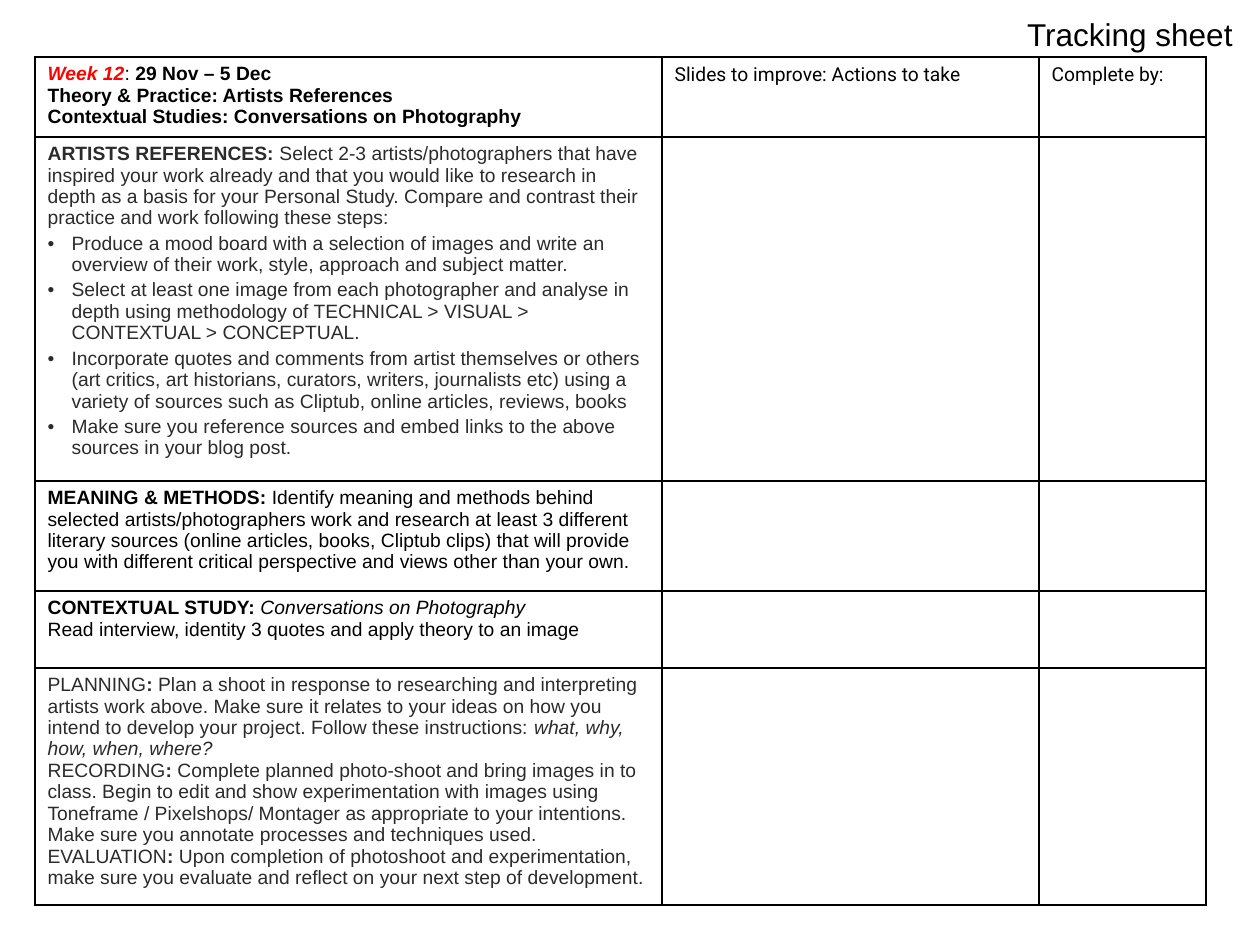
from dataclasses import dataclass
from typing import NamedTuple

from lxml.etree import SubElement
from pptx import Presentation
from pptx.dml.color import RGBColor as Color
from pptx.enum.text import MSO_ANCHOR as Anchor, PP_ALIGN as Align
from pptx.oxml.ns import qn
from pptx.util import Emu, Pt

EMU_PER_PX = 914400 / 126


def px(length: int) -> Emu:
    return Emu(round(length * EMU_PER_PX))


@dataclass(frozen=True)
class Theme:
    ink: Color = Color(0x00, 0x00, 0x00)
    soft_ink: Color = Color(0x2B, 0x2B, 0x2B)
    accent: Color = Color(0xFF, 0x00, 0x00)
    border: str = "000000"
    font: str = "Arial"
    heading_font: str = "Roboto"
    title_size: float = 18
    body_size: float = 11
    border_width: float = 1
    bullet_gap: float = 2.2


THEME = Theme()


class Span(NamedTuple):
    text: str
    bold: bool = False
    italic: bool = False
    color: Color = THEME.ink
    font: str = THEME.font
    size: float = THEME.body_size


class Line(NamedTuple):
    spans: list[Span]
    bullet: bool = False


class Row(NamedTuple):
    height: int
    cells: list[list[Line]]


def bold(text: str) -> Line:
    return Line([Span(text, bold=True)])


def heading(text: str) -> list[Line]:
    return [Line([Span(text, font=THEME.heading_font)])]


def soft(text: str, **style: bool) -> Span:
    return Span(text, color=THEME.soft_ink, **style)


def bullet(text: str) -> Line:
    return Line([soft(text)], bullet=True)


def stage(label: str, text: str, *more: Span) -> Line:
    return Line([soft(label), soft(":", bold=True), soft(text), *more])


# Table content
COLUMN_WIDTHS = [627, 377, 167]
ROWS = [
    Row(80, [
        [
            Line([
                Span("Week 12", bold=True, italic=True, color=THEME.accent),
                Span(": "),
                Span("29 Nov – 5 Dec", bold=True),
            ]),
            bold("Theory & Practice: Artists References"),
            bold("Contextual Studies: Conversations on Photography"),
        ],
        heading("Slides to improve: Actions to take"),
        heading("Complete by:"),
    ]),
    Row(344, [[
        Line([
            soft("ARTISTS REFERENCES:", bold=True),
            soft(" Select 2-3 artists/photographers that have inspired your work already "
                 "and that you would like to research in depth as a basis for your Personal "
                 "Study. Compare and contrast their practice and work following these steps:"),
        ]),
        bullet("Produce a mood board with a selection of images and write an overview of "
               "their work, style, approach and subject matter."),
        bullet("Select at least one image from each photographer and analyse in depth using "
               "methodology of TECHNICAL > VISUAL > CONTEXTUAL > CONCEPTUAL."),
        bullet("Incorporate quotes and comments from artist themselves or others (art "
               "critics, art historians, curators, writers, journalists etc) using a variety "
               "of sources such as Cliptub, online articles, reviews, books"),
        bullet("Make sure you reference sources and embed links to the above sources in "
               "your blog post."),
    ]]),
    Row(110, [[
        Line([
            Span("MEANING & METHODS:", bold=True),
            Span(" Identify meaning and methods behind selected artists/photographers work "
                 "and research at least 3 different literary sources (online articles, books, "
                 "Cliptub clips) that will provide you with different critical perspective "
                 "and views other than your own."),
        ]),
    ]]),
    Row(77, [[
        Line([
            Span("CONTEXTUAL STUDY: ", bold=True),
            Span("Conversations on Photography", italic=True),
        ]),
        Line([Span("Read interview, identity 3 quotes and apply theory to an image")]),
    ]]),
    Row(237, [[
        stage("PLANNING",
              " Plan a shoot in response to researching and interpreting artists work above. "
              "Make sure it relates to your ideas on how you intend to develop your project. "
              "Follow these instructions: ",
              soft("what, why, how, when, where?", italic=True)),
        stage("RECORDING",
              " Complete planned photo-shoot and bring images in to class. Begin to edit and "
              "show experimentation with images using Toneframe / Pixelshops/ Montager as "
              "appropriate to your intentions. Make sure you annotate processes and "
              "techniques used."),
        stage("EVALUATION",
              " Upon completion of photoshoot and experimentation, make sure you evaluate "
              "and reflect on your next step of development."),
    ]]),
]


def set_all(target, values: dict) -> None:
    for name, value in values.items():
        setattr(target, name, value)


def add_bullet(paragraph) -> None:
    paragraph.space_before = Pt(THEME.bullet_gap)
    properties = paragraph._p.get_or_add_pPr()
    properties.set("marL", str(px(24)))
    properties.set("indent", str(-px(24)))
    SubElement(properties, qn("a:buFont"), typeface=THEME.font)
    SubElement(properties, qn("a:buChar"), char="•")


def write_lines(text_frame, lines: list[Line], align: Align = Align.LEFT) -> None:
    for index, line in enumerate(lines):
        paragraph = text_frame.add_paragraph() if index else text_frame.paragraphs[0]
        paragraph.alignment = align
        if line.bullet:
            add_bullet(paragraph)
        for span in line.spans:
            run = paragraph.add_run()
            run.text = span.text
            set_all(run.font, {"name": span.font, "size": Pt(span.size),
                               "bold": span.bold, "italic": span.italic})
            run.font.color.rgb = span.color


def style_cell(cell) -> None:
    properties = cell._tc.get_or_add_tcPr()
    for side in ("lnL", "lnR", "lnT", "lnB"):
        border = SubElement(properties, qn(f"a:{side}"), w=str(Pt(THEME.border_width)))
        fill = SubElement(border, qn("a:solidFill"))
        SubElement(fill, qn("a:srgbClr"), val=THEME.border)
    cell.fill.background()


def add_tracking_table(slide, left: int, top: int) -> None:
    width, height = sum(COLUMN_WIDTHS), sum(row.height for row in ROWS)
    table = slide.shapes.add_table(len(ROWS), len(COLUMN_WIDTHS),
                                   px(left), px(top), px(width), px(height)).table
    set_all(table, {"first_row": False, "horz_banding": False})
    for column, column_width in zip(table.columns, COLUMN_WIDTHS):
        column.width = px(column_width)
    for table_row, row in zip(table.rows, ROWS):
        table_row.height = px(row.height)
        for cell in table_row.cells:
            style_cell(cell)
        for cell, lines in zip(table_row.cells, row.cells):
            write_lines(cell.text_frame, lines)


def add_title(slide, text: str) -> None:
    text_frame = slide.shapes.add_textbox(px(111), px(15), px(1134), px(40)).text_frame
    set_all(text_frame, {"word_wrap": True, "vertical_anchor": Anchor.TOP,
                         "margin_top": 0, "margin_bottom": 0})
    write_lines(text_frame, [Line([Span(text, size=THEME.title_size)])], Align.RIGHT)


def main() -> None:
    presentation = Presentation()
    set_all(presentation, {"slide_width": px(1260), "slide_height": px(945)})
    slide = presentation.slides.add_slide(presentation.slide_layouts[6])
    add_tracking_table(slide, left=35, top=57)
    add_title(slide, "Tracking sheet")
    presentation.save("out.pptx")


if __name__ == "__main__":
    main()
